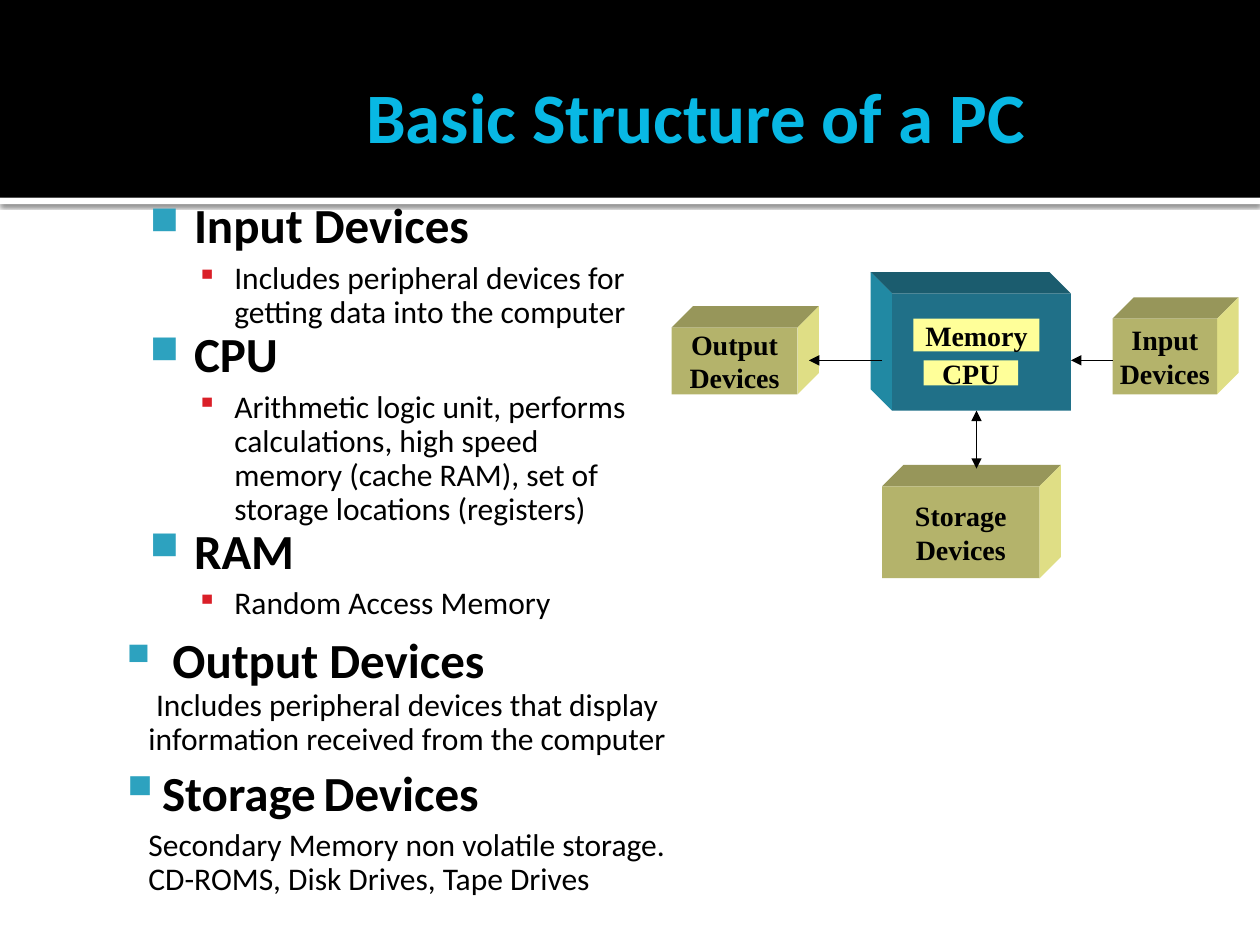
from lxml import etree
from pptx import Presentation
from pptx.dml.color import RGBColor
from pptx.enum.shapes import MSO_CONNECTOR, MSO_SHAPE
from pptx.enum.text import MSO_ANCHOR, PP_ALIGN
from pptx.oxml.ns import qn
from pptx.util import Inches, Pt

BLACK = RGBColor(0x00, 0x00, 0x00)
WHITE = RGBColor(0xFF, 0xFF, 0xFF)
TITLE_BLUE = RGBColor(0x08, 0xB8, 0xE4)
BULLET_BLUE = RGBColor(0x2D, 0xA2, 0xBF)
BULLET_RED = RGBColor(0xDA, 0x1F, 0x28)
LABEL = RGBColor(0xFF, 0xFF, 0x99)
# Box faces: front, top, side
OLIVE = (RGBColor(0xB4, 0xB3, 0x6B), RGBColor(0x97, 0x96, 0x5A), RGBColor(0xDF, 0xDE, 0x85))
TEAL = (RGBColor(0x20, 0x70, 0x88), RGBColor(0x1B, 0x5C, 0x6E), RGBColor(0x21, 0x89, 0xA3))

HEAD = dict(name="Calibri", size=Pt(28), bold=True)
BODY = dict(name="Calibri", size=Pt(18), bold=False)
GAP = dict(name="Times New Roman", size=Pt(18), bold=True)
BOX_FONT = dict(name="Times New Roman", size=Pt(16), bold=True)
TITLE_FONT = dict(name="Calibri", size=Pt(40.5), bold=True)
DEPTH = 0.17


def add_run(p, text, font, color=BLACK):
    r = p.add_run()
    r.text = text
    for key, value in font.items():
        setattr(r.font, key, value)
    r.font.color.rgb = color


def add_text(slide, x, y, w, h, insets=(0.1, 0.05, 0.1, 0.05)):
    tf = slide.shapes.add_textbox(Inches(x), Inches(y), Inches(w), Inches(h)).text_frame
    tf.word_wrap = True
    for side, value in zip(("left", "top", "right", "bottom"), insets):
        setattr(tf, f"margin_{side}", Inches(value))
    return tf


def paint(sp, color):
    sp.shadow.inherit = False
    sp.fill.solid()
    sp.fill.fore_color.rgb = color
    sp.line.fill.background()
    return sp


def add_rect(slide, x, y, w, h, color):
    box = (Inches(v) for v in (x, y, w, h))
    return paint(slide.shapes.add_shape(MSO_SHAPE.RECTANGLE, *box), color)


def add_face(slide, points, color):
    pts = [(Inches(x), Inches(y)) for x, y in points]
    builder = slide.shapes.build_freeform(*pts[0])
    builder.add_line_segments(pts[1:])
    paint(builder.convert_to_shape(), color)


def add_bullet(p, char, color, percent):
    pPr = p._p.get_or_add_pPr()
    clr = etree.SubElement(pPr, qn("a:buClr"))
    etree.SubElement(clr, qn("a:srgbClr"), val=str(color))
    etree.SubElement(pPr, qn("a:buSzPct"), val=str(percent * 1000))
    etree.SubElement(pPr, qn("a:buChar"), char=char)


def fill_list(tf, items):
    """Each item: runs, left margin, first-line indent, space before, bullet."""
    for i, (runs, left, indent, before, bullet) in enumerate(items):
        p = tf.paragraphs[0] if i == 0 else tf.add_paragraph()
        p.line_spacing = 0.9
        p.space_before = Pt(before)
        pPr = p._p.get_or_add_pPr()
        pPr.set("marL", str(Inches(left)))
        pPr.set("indent", str(Inches(indent)))
        if bullet:
            add_bullet(p, *bullet)
        for text, font in runs:
            add_run(p, text, font)


def add_header(slide, x, y, w, h):
    # White strip with a soft shadow, then the black band
    strip = add_rect(slide, x, y + h, w, 0.05, WHITE)
    effects = strip._element.spPr.find(qn("a:effectLst"))
    shadow = etree.SubElement(effects, qn("a:outerShdw"), blurRad=str(Pt(2.5)),
                              dist=str(Pt(0.8)), dir="5400000", rotWithShape="0")
    clr = etree.SubElement(shadow, qn("a:srgbClr"), val=str(BLACK))
    etree.SubElement(clr, qn("a:alpha"), val="60000")
    add_rect(slide, x, y, w, h, BLACK)
    # Title
    tf = add_text(slide, x + 1.25, y + 0.5, 8.5, 0.83, (0.1, 0.05, 0.05, 0.05))
    tf.vertical_anchor = MSO_ANCHOR.MIDDLE
    p = tf.paragraphs[0]
    p.alignment = PP_ALIGN.CENTER
    add_run(p, "Basic Structure of a PC", TITLE_FONT, TITLE_BLUE)


def add_main_list(slide, x, y, w, h):
    topics = (
        ("Input Devices", "Includes peripheral devices for getting data into the computer"),
        ("CPU", "Arithmetic logic unit, performs calculations, high speed memory "
                "(cache RAM), set of storage locations (registers)"),
        ("RAM", "Random Access Memory"),
    )
    items = []
    for head, detail in topics:
        items.append(([(head, HEAD)], 0.48, -0.35, 0, ("■", BULLET_BLUE, 80)))
        items.append(([(detail, BODY)], 0.8, -0.3, 4.4, ("▪", BULLET_RED, 90)))
    fill_list(add_text(slide, x, y, w, h, (0.06, 0.1, 0.1, 0.05)), items)


def add_lower_list(slide, x, y, w, h):
    fill_list(add_text(slide, x, y, w, h), [
        ([("Output Devices", HEAD)], 0.69, -0.43, 6.8, ("▪", BULLET_BLUE, 110)),
        ([("Includes peripheral devices that display information received "
           "from the computer", BODY)], 0.5, 0.06, 0, None),
        ([("Storage", HEAD), (" ", GAP), ("Devices", HEAD)],
         0.5, -0.24, 6.8, ("▪", BULLET_BLUE, 120)),
        ([("Secondary Memory non volatile storage. CD-ROMS, Disk Drives, Tape Drives",
           BODY)], 0.5, 0, 4.4, None),
    ])


def add_label(slide, x, y, w, h, color, lines):
    tf = add_rect(slide, x, y, w, h, color).text_frame
    tf.word_wrap = False
    tf.vertical_anchor = MSO_ANCHOR.MIDDLE
    for i, line in enumerate(lines):
        p = tf.paragraphs[0] if i == 0 else tf.add_paragraph()
        p.alignment = PP_ALIGN.CENTER
        add_run(p, line, BOX_FONT)


def add_block(slide, x, y, w, h, faces, lines=(), lean=1):
    """Front face with top and side faces; lean 1 goes right, -1 left."""
    front, top, side = faces
    dx = lean * DEPTH
    edge = x + w if lean > 0 else x
    add_face(slide, [(x, y), (x + dx, y - DEPTH), (x + w + dx, y - DEPTH), (x + w, y)], top)
    add_face(slide, [(edge, y), (edge + dx, y - DEPTH),
                     (edge + dx, y + h - DEPTH), (edge, y + h)], side)
    add_label(slide, x, y, w, h, front, lines)


def add_arrow(slide, x1, y1, x2, y2, ends):
    ln = slide.shapes.add_connector(MSO_CONNECTOR.STRAIGHT, *map(Inches, (x1, y1, x2, y2)))
    ln.line.color.rgb = BLACK
    ln.line.width = Pt(0.75)
    for end in ends:
        etree.SubElement(ln.line._get_or_add_ln(), qn(f"a:{end}"), type="triangle")
    etree.SubElement(ln._element.spPr, qn("a:effectLst"))


def add_diagram(slide, x, y):
    # Central unit with its two labels
    add_block(slide, x + 1.75, y, 1.42, 0.93, TEAL, lean=-1)
    add_label(slide, x + 1.92, y + 0.2, 1, 0.26, LABEL, ["Memory"])
    add_label(slide, x + 2, y + 0.53, 0.75, 0.2, LABEL, ["CPU"])
    # Surrounding devices
    for name, dx, dy, w, h in (("Input", 3.5, 0.2, 0.83, 0.6),
                               ("Storage", 1.67, 1.53, 1.25, 0.73),
                               ("Output", 0, 0.27, 1, 0.53)):
        add_block(slide, x + dx, y + dy, w, h, OLIVE, [name, "Devices"])
    # Data flow
    flow = y + 0.53
    add_arrow(slide, x + 1.67, flow, x + 1.09, flow, ["tailEnd"])
    add_arrow(slide, x + 3.5, flow, x + 3.17, flow, ["tailEnd"])
    add_arrow(slide, x + 2.42, y + 0.93, x + 2.42, y + 1.39, ["headEnd", "tailEnd"])


def main():
    prs = Presentation()
    prs.slide_width, prs.slide_height = Inches(10), Inches(7.5)
    slide = prs.slides.add_slide(prs.slide_layouts[6])
    add_header(slide, 0, 0, 10, 1.57)
    add_main_list(slide, 1, 1.5, 4.25, 5.17)
    add_diagram(slide, 5.33, 2.33)
    add_lower_list(slide, 0.58, 5, 4.92, 2.27)
    prs.save("out.pptx")


if __name__ == "__main__":
    main()
